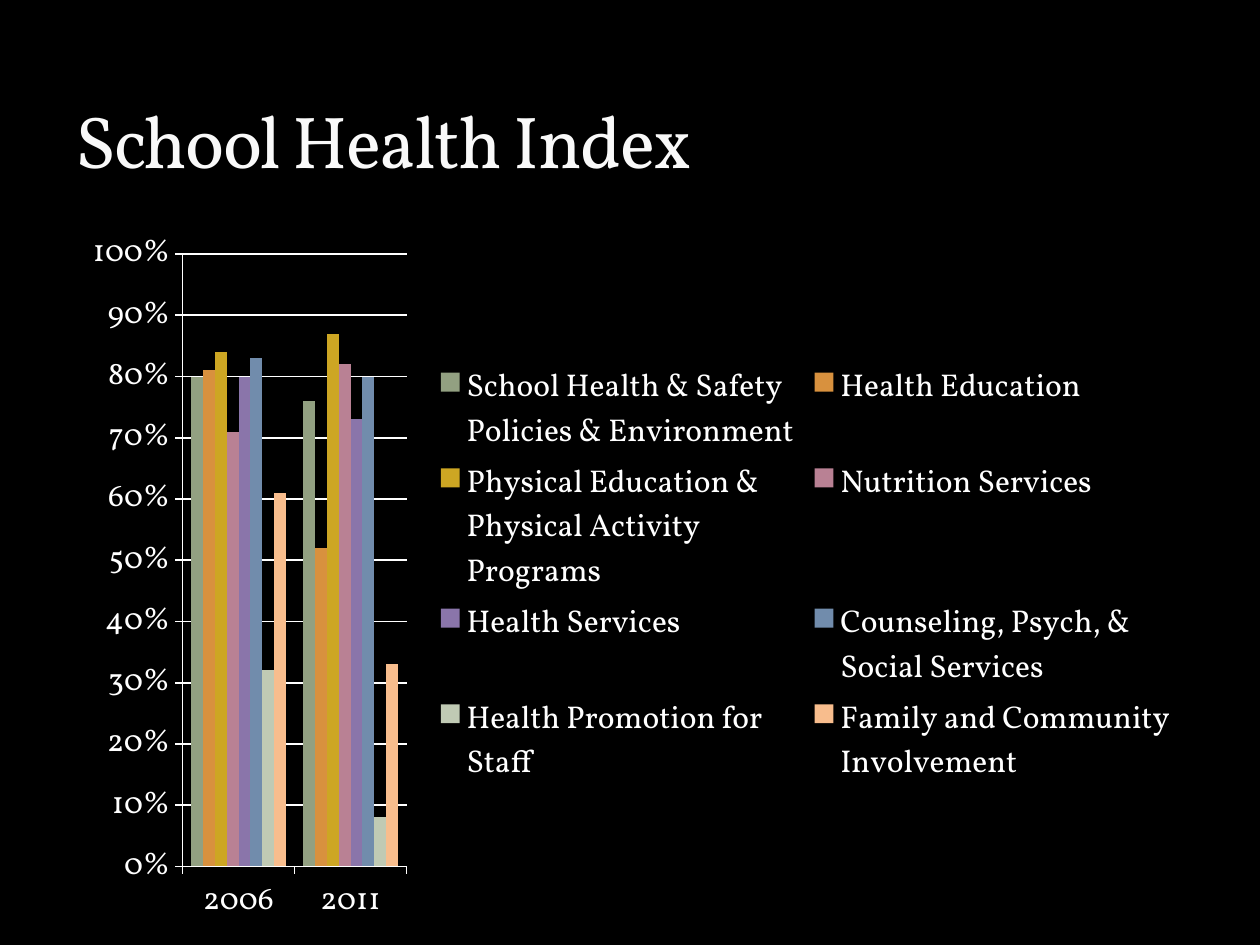
from lxml import etree
from pptx import Presentation
from pptx import util as u
from pptx.chart.data import CategoryChartData
from pptx.dml.color import RGBColor
from pptx.enum import chart as ch
from pptx.enum import text
from pptx.oxml import parse_xml
from pptx.oxml.ns import nsdecls, qn

Pt = u.Pt
THEME = {
    "font": "Vollkorn",
    "background": "000000",
    "title": "F9F9F9",
    "outline": "3C4422",
    "text": "FFFFFF",
    "title_size": 42,
    "chart_size": 18,
}
YEARS = ["2006", "2011"]
INDEX_SCORES = [
    ("School Health & Safety Policies & Environment", (0.80, 0.76), "92A081"),
    ("Health Education", (0.81, 0.52), "D8913E"),
    ("Physical Education & Physical Activity Programs", (0.84, 0.87), "CDA623"),
    ("Nutrition Services", (0.71, 0.82), "B98194"),
    ("Health Services", (0.80, 0.73), "8A75AA"),
    ("Counseling, Psych, & Social Services", (0.83, 0.80), "718CAC"),
    ("Health Promotion for Staff", (0.32, 0.08), "C0CAB4"),
    ("Family and Community Involvement", (0.61, 0.33), "F8BD8D"),
]


def style(target, **values):
    for name, value in values.items():
        setattr(target, name, value)


deck = Presentation()
style(deck, slide_width=Pt(720), slide_height=Pt(540))
slide = deck.slides.add_slide(deck.slide_layouts[5])
slide.background.fill.solid()
slide.background.fill.fore_color.rgb = RGBColor.from_string(THEME["background"])

heading = slide.shapes.title
style(heading, left=Pt(36), top=Pt(12.5), width=Pt(648), height=Pt(96))
style(heading.text_frame, vertical_anchor=text.MSO_ANCHOR.BOTTOM, word_wrap=True)
heading_line = heading.text_frame.paragraphs[0]
heading_line.alignment = text.PP_ALIGN.LEFT
heading_run = heading_line.add_run()
heading_run.text = "School Health Index"
style(heading_run.font, name=THEME["font"], size=Pt(THEME["title_size"]), bold=False)
heading_run.font.color.rgb = RGBColor.from_string(THEME["title"])
run_format = heading_run.font._element
run_format.set("spc", "-100")
outline = etree.fromstring(
    f'<a:ln {nsdecls("a")} w="3175"><a:solidFill><a:srgbClr val="{THEME["outline"]}">'
    '<a:alpha val="25000"/></a:srgbClr></a:solidFill></a:ln>'
)
run_format.insert(0, outline)

scores = CategoryChartData(number_format="0%")
scores.categories = YEARS
for topic, values, color in INDEX_SCORES:
    scores.add_series(topic, values)
index_chart = slide.shapes.add_chart(
    ch.XL_CHART_TYPE.COLUMN_CLUSTERED, Pt(40.3), Pt(123.8), Pt(640), Pt(411.8), scores
).chart
style(index_chart, has_title=False, has_legend=True)
style(index_chart.font, name=THEME["font"], size=Pt(THEME["chart_size"]))
index_chart.font.color.rgb = RGBColor.from_string(THEME["text"])

columns = index_chart.plots[0]
style(columns, gap_width=150, overlap=0, vary_by_categories=False)
for series, (topic, values, color) in zip(columns.series, INDEX_SCORES):
    style(series, invert_if_negative=False)
    series.format.fill.solid()
    series.format.fill.fore_color.rgb = RGBColor.from_string(color)

years, percent = index_chart.category_axis, index_chart.value_axis
style(percent, minimum_scale=0, maximum_scale=1, major_unit=0.1, has_major_gridlines=True)
style(percent.tick_labels, number_format="0%", number_format_is_linked=False)
for axis in (years, percent):
    style(axis, major_tick_mark=ch.XL_TICK_MARK.OUTSIDE, minor_tick_mark=ch.XL_TICK_MARK.NONE)
for line in (years.format.line, percent.format.line, percent.major_gridlines.format.line):
    line.width = Pt(1)
    line.color.rgb = RGBColor.from_string(THEME["text"])

style(index_chart.legend, position=ch.XL_LEGEND_POSITION.RIGHT, include_in_layout=False)

plot_area = index_chart._chartSpace.chart.plotArea
for old_layout in plot_area.findall(qn("c:layout")):
    plot_area.remove(old_layout)
edges = "".join(f'<c:{axis}Mode val="edge"/>' for axis in "xy")
sizes = "".join(f'<c:{key} val="{size}"/>' for key, size in zip("xywh", (0.1, 0.052, 0.2, 0.85)))
plot_area.insert(0, parse_xml(
    f'<c:layout {nsdecls("c")}><c:manualLayout><c:layoutTarget val="inner"/>'
    f"{edges}{sizes}</c:manualLayout></c:layout>"
))

deck.save("out.pptx")
